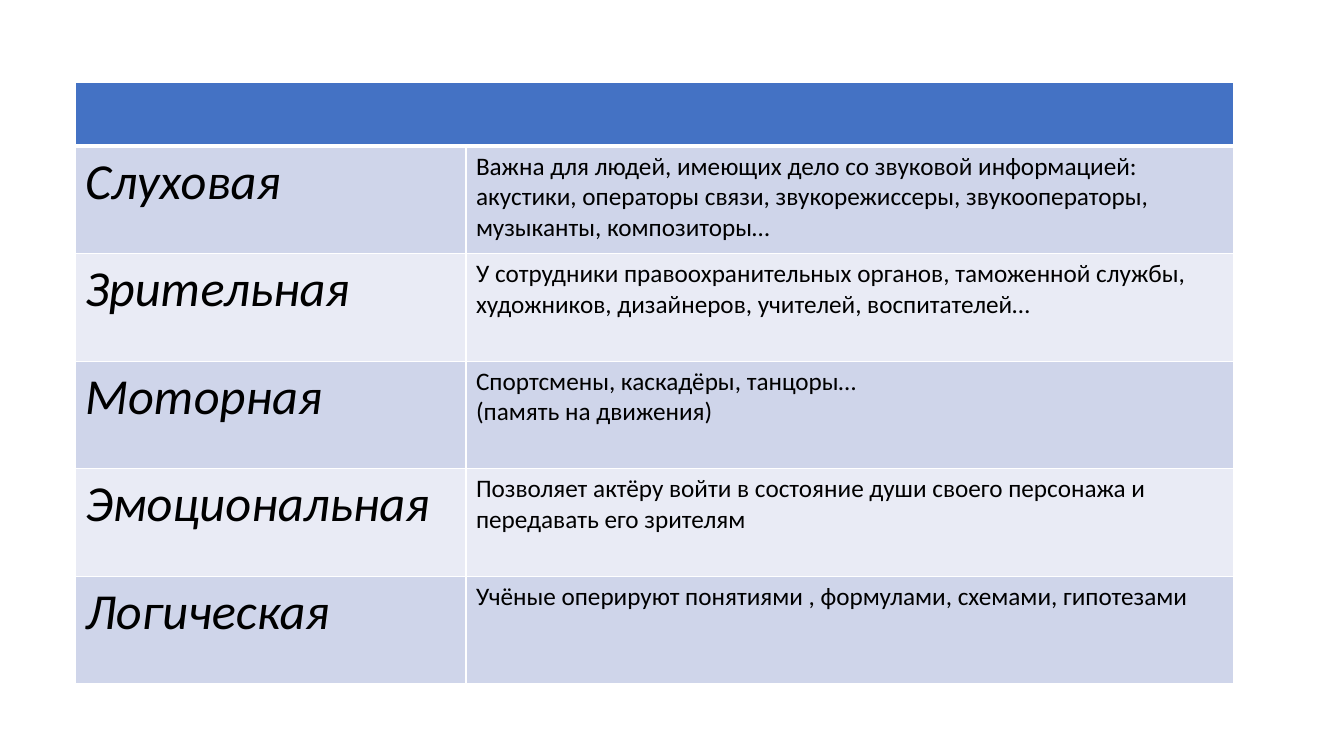
from lxml.etree import SubElement
from pptx import Presentation
from pptx.dml.color import RGBColor
from pptx.oxml.ns import qn
from pptx.util import Emu, Pt

WHITE = RGBColor(0xFF, 0xFF, 0xFF)
BLACK = RGBColor(0x00, 0x00, 0x00)
HEADER_BLUE = RGBColor(0x44, 0x72, 0xC4)
BANDS = (RGBColor(0xCF, 0xD5, 0xEA), RGBColor(0xE9, 0xEB, 0xF5))
FONT = "Calibri"

# Lengths in px
SLIDE_WIDTH, SLIDE_HEIGHT = 1344, 756
LEFT, TOP = 75, 82
COLUMN_WIDTHS = (391, 768)
HEADER_HEIGHT, BODY_HEIGHT = 64, 538

# Kind of memory, then the paragraphs that describe it
MEMORY_KINDS = [
    ("Слуховая", [
        "Важна для людей, имеющих дело со звуковой информацией:",
        "акустики, операторы связи, звукорежиссеры, звукооператоры, "
        "музыканты, композиторы…"]),
    ("Зрительная", [
        "У сотрудники правоохранительных органов, таможенной службы, "
        "художников, дизайнеров, учителей, воспитателей…"]),
    ("Моторная", ["Спортсмены, каскадёры, танцоры…", "(память на движения)"]),
    ("Эмоциональная", [
        "Позволяет актёру войти в состояние души своего персонажа и "
        "передавать его зрителям"]),
    ("Логическая", [
        "Учёные оперируют понятиями , формулами, схемами, гипотезами"]),
]


def px(length):
    return Emu(round(length * 914400 / 100.8))


def write(cell, paragraphs, size=18, italic=False, color=BLACK):
    frame = cell.text_frame
    for index, text in enumerate(paragraphs):
        para = frame.add_paragraph() if index else frame.paragraphs[0]
        span = para.add_run()
        span.text = text
        span.font.name = FONT
        span.font.size = Pt(size)
        span.font.italic = italic
        span.font.color.rgb = color


def style_cell(cell, fill, top=1, bottom=1):
    # Borders come before the fill in the cell properties
    properties = cell._tc.get_or_add_tcPr()
    for side, width in (("L", 1), ("R", 1), ("T", top), ("B", bottom)):
        line = SubElement(properties, qn(f"a:ln{side}"), w=str(Pt(width)))
        solid = SubElement(line, qn("a:solidFill"))
        SubElement(solid, qn("a:srgbClr"), val=str(WHITE))
    cell.fill.solid()
    cell.fill.fore_color.rgb = fill


def add_memory_table(page):
    frame = page.shapes.add_table(
        len(MEMORY_KINDS) + 1, len(COLUMN_WIDTHS), px(LEFT), px(TOP),
        px(sum(COLUMN_WIDTHS)), px(HEADER_HEIGHT + BODY_HEIGHT))
    table = frame.table
    for column, width in zip(table.columns, COLUMN_WIDTHS):
        column.width = px(width)

    # Empty header across both columns
    table.rows[0].height = px(HEADER_HEIGHT)
    for cell in table.rows[0].cells:
        style_cell(cell, HEADER_BLUE, bottom=3)
    table.cell(0, 0).merge(table.cell(0, 1))

    # Banded body rows of equal height
    for index, (kind, description) in enumerate(MEMORY_KINDS):
        row = table.rows[index + 1]
        row.height = px(BODY_HEIGHT / len(MEMORY_KINDS))
        for cell in row.cells:
            style_cell(cell, BANDS[index % 2], top=1 if index else 3)
        write(row.cells[0], [kind], size=36, italic=True)
        write(row.cells[1], description)


def main():
    deck = Presentation()
    deck.slide_width = px(SLIDE_WIDTH)
    deck.slide_height = px(SLIDE_HEIGHT)
    page = deck.slides.add_slide(deck.slide_layouts[6])
    add_memory_table(page)
    deck.save("out.pptx")


if __name__ == "__main__":
    main()
